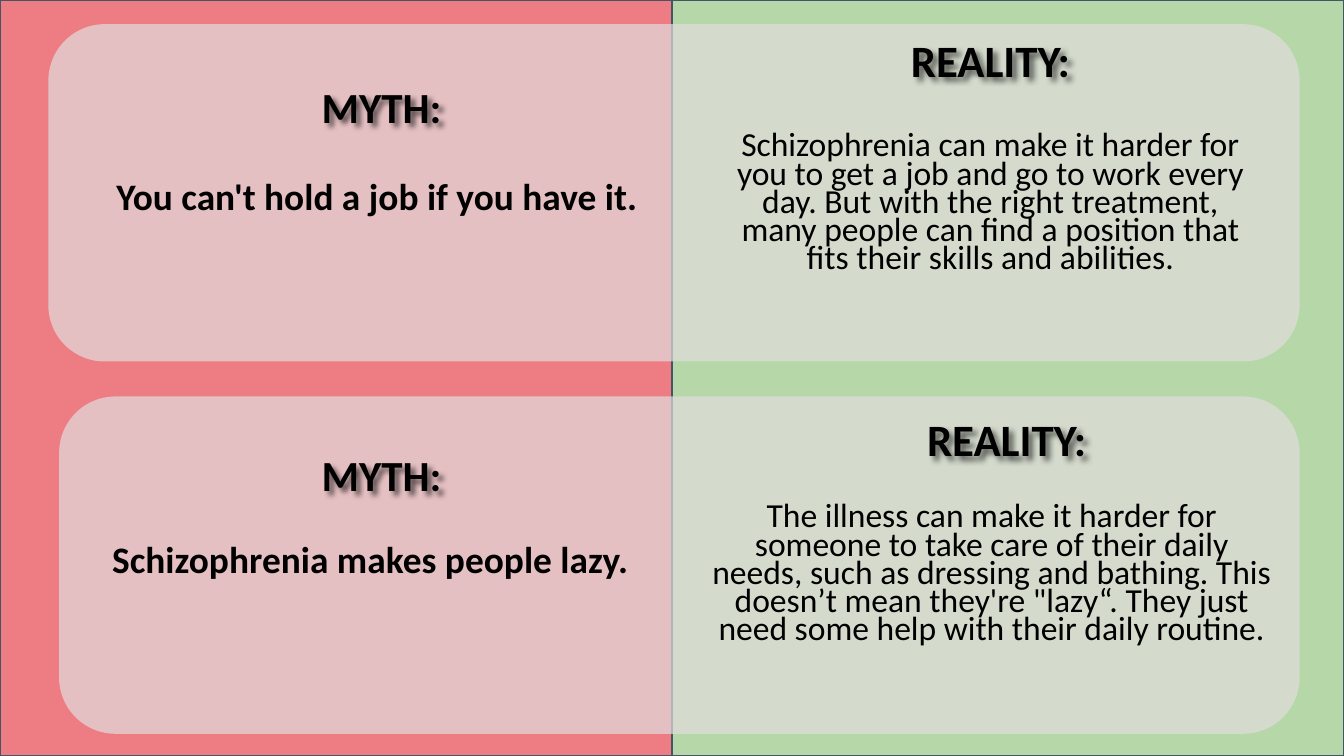
import pptx
import pptx.dml.color
import pptx.enum.shapes
import pptx.enum.text
import pptx.oxml
import pptx.oxml.ns
import pptx.util

COLORS = {
    "myth": "ED7C83",
    "reality": "B6D7A8",
    "border": "44546A",
    "card": "E2DEDE",
    "text": "000000",
}
FONT = "Calibri"
COLUMNS = 100
ROWS = COLUMNS * 9 / 16
INDENT = 1.9
NAMESPACE = pptx.oxml.ns.nsdecls("a")


class MythSlide:
    def __init__(self, presentation):
        self.slide = presentation.slides.add_slide(presentation.slide_layouts[6])
        self.cell = presentation.slide_width / COLUMNS

    def length(self, cells):
        return pptx.util.Emu(round(cells * self.cell))

    def color(self, name):
        return pptx.dml.color.RGBColor.from_string(COLORS[name])

    def box(self, kind, area, fill):
        shape = self.slide.shapes.add_shape(kind, *map(self.length, area))
        shape.shadow.inherit = False
        shape.fill.solid()
        shape.fill.fore_color.rgb = self.color(fill)
        return shape

    def panel(self, area, fill):
        shape = self.box(pptx.enum.shapes.MSO_SHAPE.RECTANGLE, area, fill)
        shape.line.color.rgb = self.color("border")
        shape.line.width = pptx.util.Pt(0.75)

    def card(self, area):
        shape = self.box(pptx.enum.shapes.MSO_SHAPE.ROUNDED_RECTANGLE, area, "card")
        shape.adjustments[0] = 0.167
        shape.line.fill.background()
        color = shape.fill._xPr.find(".//" + pptx.oxml.ns.qn("a:srgbClr"))
        color.append(pptx.oxml.parse_xml(f'<a:alpha {NAMESPACE} val="70000"/>'))

    def text(self, area, words, size, bold=False, spacing=0.7, indent=0):
        shape = self.slide.shapes.add_textbox(*map(self.length, area))
        frame = shape.text_frame
        frame.word_wrap = True
        frame.margin_left = self.length(0.7 + indent)
        frame.margin_right = self.length(0.7)
        frame.margin_top = frame.margin_bottom = self.length(0.4)
        paragraph = frame.paragraphs[0]
        paragraph.text = words
        paragraph.alignment = pptx.enum.text.PP_ALIGN.CENTER
        paragraph.line_spacing = spacing
        paragraph.font.name = FONT
        paragraph.font.size = pptx.util.Pt(size)
        paragraph.font.bold = bold
        paragraph.font.color.rgb = self.color("text")
        return shape

    def heading(self, area, words, size, indent=0):
        shape = self.text(area, words, size, True, 0.8, indent)
        shape._element.spPr.append(pptx.oxml.parse_xml(
            f'<a:effectLst {NAMESPACE}>'
            '<a:outerShdw blurRad="38100" dist="38100" dir="2700000" algn="tl">'
            f'<a:srgbClr val="{COLORS["text"]}"><a:alpha val="60000"/></a:srgbClr>'
            '</a:outerShdw></a:effectLst>'))


def main():
    presentation = pptx.Presentation()
    presentation.slide_width = pptx.util.Inches(10)
    presentation.slide_height = presentation.slide_width * 9 // 16
    slide = MythSlide(presentation)

    half = COLUMNS / 2
    slide.panel((half, 0, half, ROWS), "reality")
    slide.panel((0, 0, half, ROWS), "myth")

    pairs = [
        {
            "card": (3.6, 1.8, 93.1, 25.1),
            "myth heading": (8.4, 6.3, 40, 5.1),
            "myth area": (7.3, 13.4, 41.5, 8.4),
            "myth": "You can't hold a job if you have it.",
            "reality heading": (51.2, 2.8, 43.1, 6.1),
            "reality area": (51.2, 9.6, 43.1, 15.9),
            "reality": "Schizophrenia can make it harder for you to get a job and go to "
                       "work every day. But with the right treatment, many people can "
                       "find a position that fits their skills and abilities.",
        },
        {
            "card": (4.4, 29.5, 92.3, 25.1),
            "myth heading": (8.4, 33.7, 40, 5.1),
            "myth area": (6, 40.4, 43.1, 8.4),
            "myth": "Schizophrenia makes people lazy.",
            "reality heading": (52.4, 31, 43.1, 6.1),
            "reality area": (50.1, 37.2, 45.5, 15.9),
            "reality": "The illness can make it harder for someone to take care of their "
                       "daily needs, such as dressing and bathing. This doesn’t mean "
                       "they're \"lazy“. They just need some help with their daily routine.",
        },
    ]
    for pair in pairs:
        slide.card(pair["card"])
        slide.text(pair["myth area"], pair["myth"], 20, bold=True)
        slide.text(pair["reality area"], pair["reality"], 18, indent=INDENT)
        slide.heading(pair["reality heading"], "REALITY:", 24, INDENT)
        slide.heading(pair["myth heading"], "MYTH:", 23)

    presentation.save("out.pptx")


if __name__ == "__main__":
    main()
